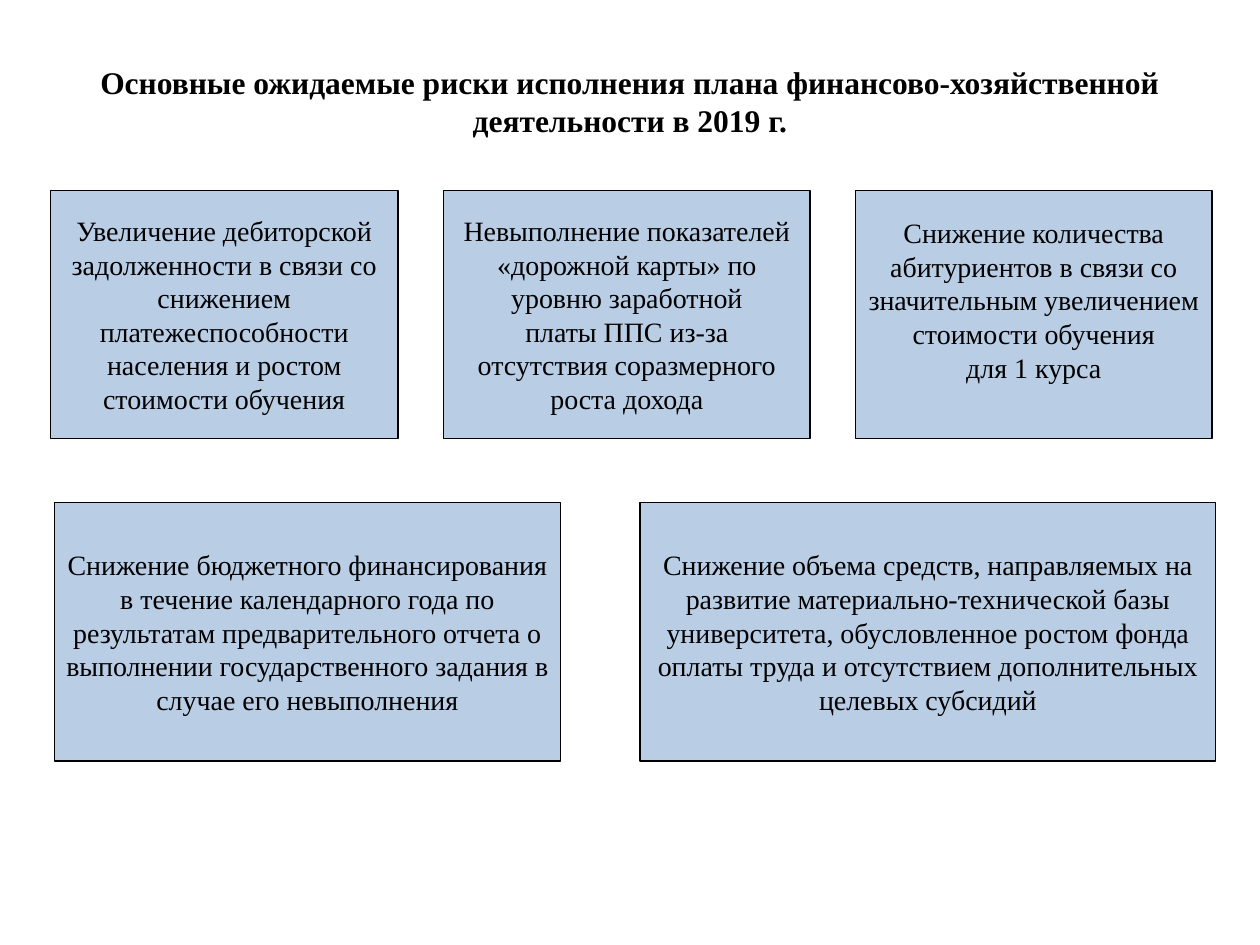
from pptx import Presentation
from pptx.dml.color import RGBColor
from pptx.enum.shapes import MSO_SHAPE
from pptx.enum.text import MSO_ANCHOR, PP_ALIGN
from pptx.util import Inches, Pt

BLACK = RGBColor(0x00, 0x00, 0x00)
PALE_BLUE = RGBColor(0xB9, 0xCD, 0xE5)

TITLE = "Основные ожидаемые риски исполнения плана финансово-хозяйственной деятельности в 2019 г."

TOP_RISKS = [
    (0.4, 2.76, 0.06, [
        "Увеличение дебиторской задолженности в связи со снижением "
        "платежеспособности населения и ростом стоимости обучения"]),
    (3.52, 2.91, 0.06, [
        "Невыполнение показателей «дорожной карты» по уровню заработной",
        "платы ППС из-за",
        "отсутствия соразмерного роста дохода"]),
    (6.79, 2.83, 0.29, [
        "Снижение количества абитуриентов в связи со значительным "
        "увеличением стоимости обучения\vдля 1 курса"]),
]

BOTTOM_RISKS = [
    (0.43, 4.02, 0.06, [
        "Снижение бюджетного финансирования в течение календарного года по "
        "результатам предварительного отчета о выполнении государственного "
        "задания в случае его невыполнения"]),
    (5.08, 4.57, 0.06, [
        "Снижение объема средств, направляемых на развитие "
        "материально-технической базы университета, обусловленное ростом фонда "
        "оплаты труда и отсутствием дополнительных целевых субсидий"]),
]

ROWS = [(1.51, 1.97, TOP_RISKS), (3.99, 2.05, BOTTOM_RISKS)]


class RiskPage:
    """Draws the title and the risk boxes on one page in a shared style."""

    font_name = "Times New Roman"
    padding = Inches(0.06)

    def __init__(self, page):
        self.page = page

    def set_text(self, frame, lines, size, bold=False):
        frame.word_wrap = True
        frame.vertical_anchor = MSO_ANCHOR.MIDDLE
        for index, line in enumerate(lines):
            para = frame.paragraphs[0] if index == 0 else frame.add_paragraph()
            para.text = line
            para.alignment = PP_ALIGN.CENTER
            para.font.name = self.font_name
            para.font.size = Pt(size)
            para.font.bold = bold
            para.font.color.rgb = BLACK

    def title(self, text):
        box = self.page.shapes.add_textbox(Inches(0.5), Inches(0.4), Inches(9), Inches(0.8))
        self.set_text(box.text_frame, [text], 18, bold=True)

    def risk(self, left, top, width, height, bottom_padding, lines):
        box = self.page.shapes.add_shape(
            MSO_SHAPE.RECTANGLE, Inches(left), Inches(top), Inches(width), Inches(height))
        box.shadow.inherit = False
        box.fill.solid()
        box.fill.fore_color.rgb = PALE_BLUE
        box.line.color.rgb = BLACK
        box.line.width = Pt(0.75)
        frame = box.text_frame
        frame.margin_left = frame.margin_right = frame.margin_top = self.padding
        frame.margin_bottom = Inches(bottom_padding)
        self.set_text(frame, lines, 16)


def main():
    deck = Presentation()
    deck.slide_width, deck.slide_height = Inches(10), Inches(7.5)
    risk_page = RiskPage(deck.slides.add_slide(deck.slide_layouts[6]))
    risk_page.title(TITLE)
    for top, height, risks in ROWS:
        for left, width, bottom_padding, lines in risks:
            risk_page.risk(left, top, width, height, bottom_padding, lines)
    deck.save("out.pptx")


if __name__ == "__main__":
    main()
